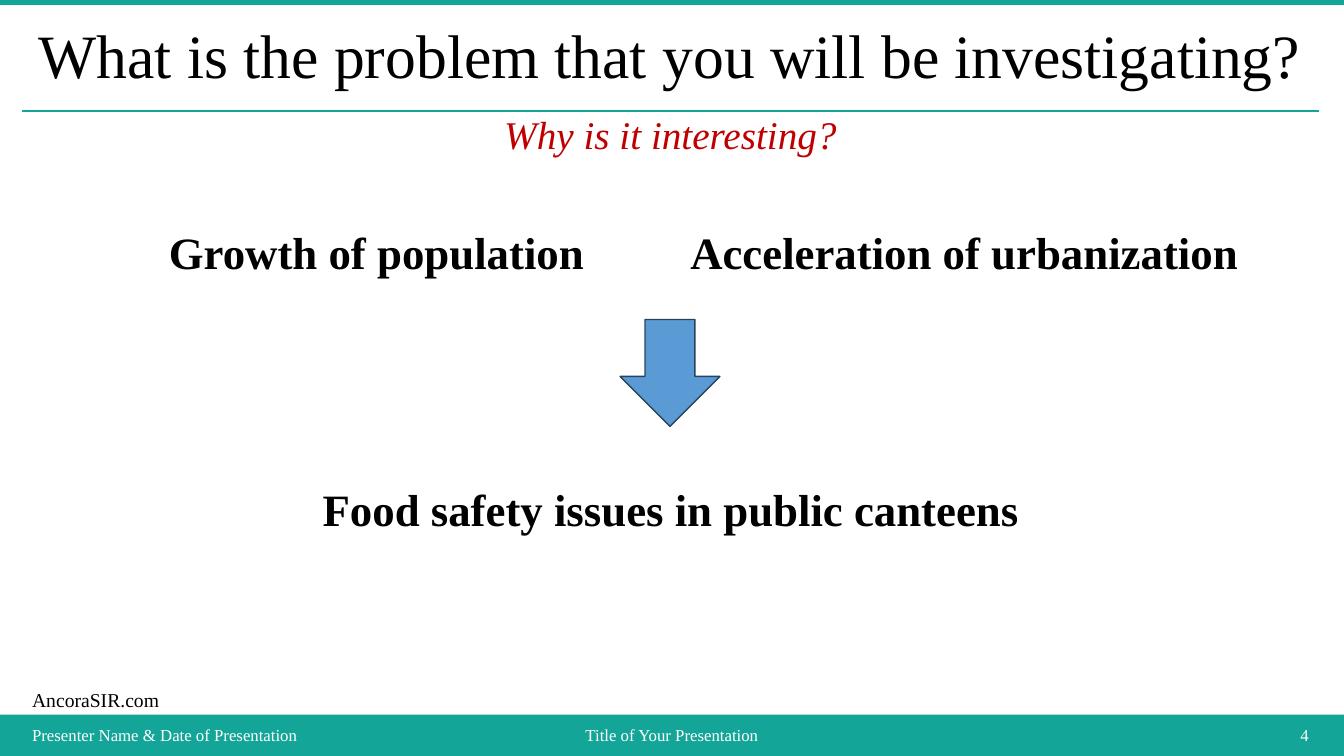
from dataclasses import dataclass

from pptx import Presentation
from pptx.dml.color import RGBColor
from pptx.enum.shapes import MSO_CONNECTOR, MSO_SHAPE
from pptx.enum.text import MSO_ANCHOR as Anchor, MSO_AUTO_SIZE as AutoSize, PP_ALIGN as Align
from pptx.oxml.ns import qn
from pptx.slide import Slide
from pptx.text.text import TextFrame
from pptx.util import Inches, Pt
from lxml.etree import SubElement

COLORS = {
    "teal": "14A599",
    "white": "FFFFFF",
    "black": "000000",
    "red": "C00000",
    "arrow": "5B9BD5",
    "arrow_edge": "28445D",
}
FONT = "Times New Roman"
MARGIN, CONTENT_WIDTH = 0.22, 12.86
FOOTER_TOP, FOOTER_HEIGHT = 7.09, 0.4


@dataclass
class TextStyle:
    size: float
    color: str = "black"
    align: Align = Align.LEFT
    bold: bool = False
    italic: bool = False
    line_spacing: float = 1.0


@dataclass
class Label:
    text: str
    left: float
    top: float
    width: float
    height: float
    style: TextStyle
    anchor: Anchor = Anchor.TOP
    wrap: bool = True


@dataclass
class StatementRow:
    statements: list[str]
    left: float
    top: float
    width: float
    height: float


TITLE_STYLE = TextStyle(44, align=Align.CENTER, line_spacing=0.9)
STATEMENT_STYLE = TextStyle(32, align=Align.CENTER, bold=True)

LABELS = [
    Label("AncoraSIR.com", MARGIN, 6.78, 1.47, 0.34, TextStyle(14), wrap=False),
    Label("Why is it interesting?", MARGIN, 1.1, CONTENT_WIDTH, 0.56,
          TextStyle(28, "red", Align.CENTER, italic=True, line_spacing=0.9)),
] + [
    Label(text, left, FOOTER_TOP, width, FOOTER_HEIGHT,
          TextStyle(12, "white", align), Anchor.MIDDLE)
    for text, left, width, align in [
        ("Presenter Name & Date of Presentation", MARGIN, 4.86, Align.LEFT),
        ("Title of Your Presentation", 5.08, 3.17, Align.CENTER),
        ("4", 8.25, 4.83, Align.RIGHT),
    ]
]
STATEMENT_ROWS = [
    StatementRow(["Growth of population", "Acceleration of urbanization"],
                 0.82, 2.23, 11.66, 1.43),
    StatementRow(["Food safety issues in public canteens"], 2.21, 4.78, 8.89, 0.63),
]


def color(name: str) -> RGBColor:
    return RGBColor.from_string(COLORS[name])


def write_text(frame: TextFrame, text: str, style: TextStyle) -> None:
    paragraph = frame.paragraphs[0]
    paragraph.alignment = style.align
    paragraph.line_spacing = style.line_spacing
    paragraph.space_before = Pt(0)
    run = paragraph.add_run()
    run.text = text
    run.font.name = FONT
    run.font.size = Pt(style.size)
    run.font.bold = style.bold
    run.font.italic = style.italic
    run.font.color.rgb = color(style.color)


def add_backdrop(slide: Slide) -> None:
    """Teal background with a white panel that leaves bands at top and bottom."""
    slide.background.fill.solid()
    slide.background.fill.fore_color.rgb = color("teal")
    panel = slide.shapes.add_shape(
        MSO_SHAPE.RECTANGLE, 0, Inches(0.05), Inches(13.33), Inches(7.04))
    panel.shadow.inherit = False
    panel.fill.solid()
    panel.fill.fore_color.rgb = color("white")
    panel.line.fill.background()


def add_title_rule(slide: Slide) -> None:
    rule = slide.shapes.add_connector(
        MSO_CONNECTOR.STRAIGHT, Inches(MARGIN), Inches(1.1),
        Inches(MARGIN + CONTENT_WIDTH), Inches(1.1))
    rule.line.color.rgb = color("teal")
    rule.line.width = Pt(1)
    SubElement(rule._element.spPr, qn("a:effectLst"))


def add_title(slide: Slide, text: str) -> None:
    title = slide.shapes.title
    title.left, title.top = Inches(MARGIN), Inches(0.08)
    title.width, title.height = Inches(CONTENT_WIDTH), Inches(1.01)
    title.text_frame.auto_size = AutoSize.NONE
    title.text_frame.vertical_anchor = Anchor.MIDDLE
    write_text(title.text_frame, text, TITLE_STYLE)
    # Bring the placeholder in front of the white panel.
    slide.shapes._spTree.append(title._element)


def add_label(slide: Slide, label: Label) -> None:
    box = slide.shapes.add_textbox(
        Inches(label.left), Inches(label.top), Inches(label.width), Inches(label.height))
    box.text_frame.word_wrap = label.wrap
    box.text_frame.vertical_anchor = label.anchor
    write_text(box.text_frame, label.text, label.style)


def add_statement_row(slide: Slide, row: StatementRow) -> None:
    table = slide.shapes.add_table(
        1, len(row.statements), Inches(row.left), Inches(row.top),
        Inches(row.width), Inches(row.height)).table
    for cell, statement in zip(table.iter_cells(), row.statements):
        cell.fill.solid()
        cell.fill.fore_color.rgb = color("white")
        write_text(cell.text_frame, statement, STATEMENT_STYLE)


def add_down_arrow(slide: Slide) -> None:
    arrow = slide.shapes.add_shape(
        MSO_SHAPE.DOWN_ARROW, Inches(6.15), Inches(3.17), Inches(0.99), Inches(1.06))
    arrow.shadow.inherit = False
    arrow.fill.solid()
    arrow.fill.fore_color.rgb = color("arrow")
    arrow.line.color.rgb = color("arrow_edge")
    arrow.line.width = Pt(1)


def main() -> None:
    presentation = Presentation()
    presentation.slide_width = Inches(13.33)
    presentation.slide_height = Inches(7.5)
    slide = presentation.slides.add_slide(presentation.slide_layouts[5])
    add_backdrop(slide)
    add_title_rule(slide)
    add_title(slide, "What is the problem that you will be investigating?")
    for label in LABELS:
        add_label(slide, label)
    for row in STATEMENT_ROWS:
        add_statement_row(slide, row)
    add_down_arrow(slide)
    presentation.save("out.pptx")


if __name__ == "__main__":
    main()
